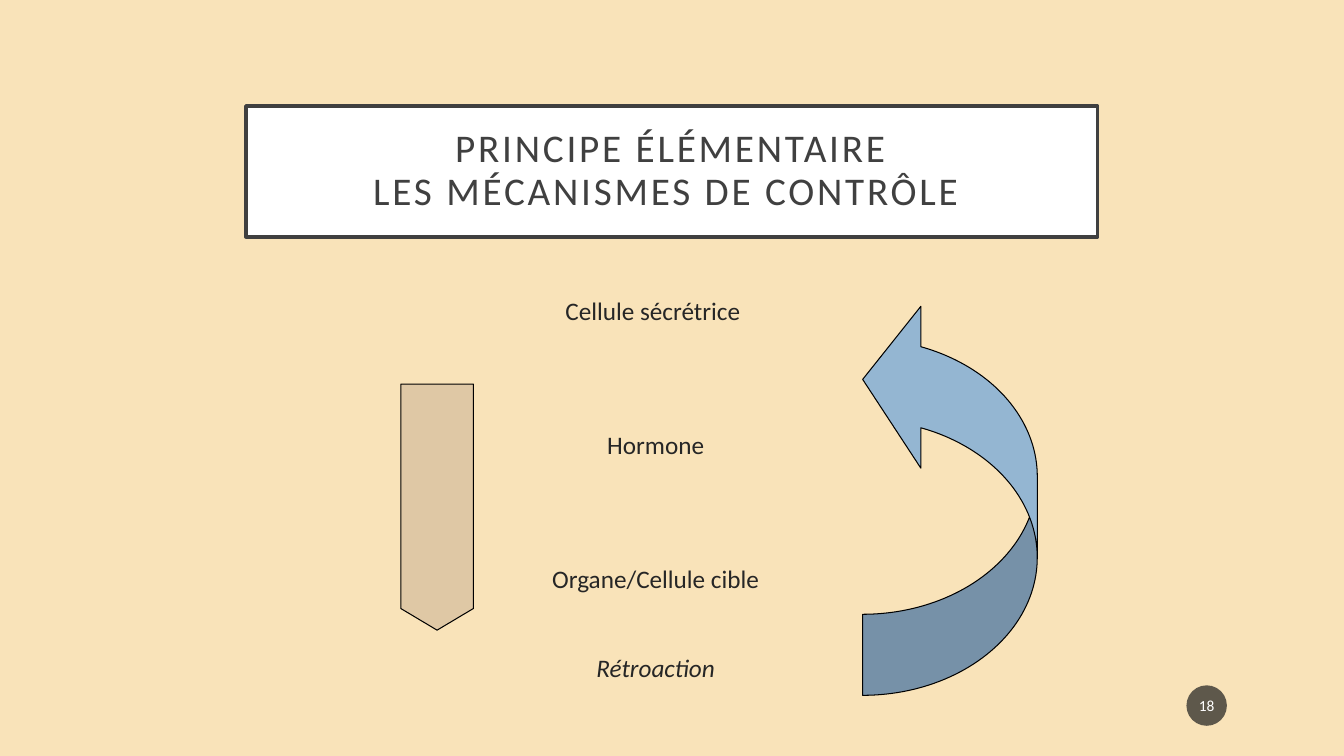
from lxml import etree
from pptx import Presentation
from pptx.dml.color import RGBColor
from pptx.enum.shapes import MSO_SHAPE
from pptx.enum.text import MSO_ANCHOR, PP_ALIGN
from pptx.oxml.ns import qn
from pptx.util import Cm, Pt

RECTANGLE, OVAL = MSO_SHAPE.RECTANGLE, MSO_SHAPE.OVAL
PENTAGON, CURVED_ARROW = MSO_SHAPE.PENTAGON, MSO_SHAPE.CURVED_RIGHT_ARROW
CENTER, MIDDLE, TOP = PP_ALIGN.CENTER, MSO_ANCHOR.MIDDLE, MSO_ANCHOR.TOP

FONT = "Calibri"
COLORS = {
    "background": "F9E3B9", "title_fill": "FFFFFF", "title": "404040",
    "body": "262626", "badge": "1D1D1D", "badge_text": "FFFFFF",
    "descent": "775F55", "feedback": "94B6D2", "outline": "000000",
}
ROW, LINE = 32, 22  # step of the label grid and height of a text line, in points


def color(name):
    return RGBColor.from_string(COLORS[name])


def add_figure(slide, kind, box, fill, opacity=100, line=None, width=0.75,
               rotation=0, adjustments=()):
    figure = slide.shapes.add_shape(kind, *(Cm(length) for length in box))
    figure.shadow.inherit = False
    figure.rotation = rotation
    for index, value in enumerate(adjustments):
        figure.adjustments[index] = value
    figure.fill.solid()
    figure.fill.fore_color.rgb = color(fill)
    if opacity < 100:
        tint = figure.fill._xPr.find(f"{qn('a:solidFill')}/{qn('a:srgbClr')}")
        etree.SubElement(tint, qn("a:alpha"), val=str(opacity * 1000))
    if line:
        figure.line.color.rgb = color(line)
        figure.line.width = Pt(width)
    else:
        figure.line.fill.background()
    return figure


def write(paragraph, text, size=18, ink="body", italic=False, tracking=0,
          before=0, spacing=1.0):
    paragraph.text = text
    paragraph.alignment = CENTER
    paragraph.space_before = Pt(before)
    paragraph.line_spacing = spacing
    for run in paragraph.runs:
        run.font.name = FONT
        run.font.size = Pt(size)
        run.font.italic = italic
        run.font.color.rgb = color(ink)
        if tracking:
            run.font._element.set("spc", str(tracking * 100))


def set_frame(frame, anchor, side, top):
    frame.word_wrap = True
    frame.vertical_anchor = anchor
    frame.margin_left = frame.margin_right = Cm(side)
    frame.margin_top = frame.margin_bottom = Cm(top)


def add_title(slide, box):
    title = add_figure(slide, RECTANGLE, box, "title_fill", line="title", width=2.5)
    set_frame(title.text_frame, MIDDLE, 0.5, 0.5)
    write(title.text_frame.paragraphs[0],
          "PRINCIPE ÉLÉMENTAIRE\vLES MÉCANISMES DE CONTRÔLE ",
          size=28, ink="title", tracking=2, spacing=0.9)


def add_labels(slide, box):
    labels = slide.shapes.add_textbox(*(Cm(length) for length in box)).text_frame
    set_frame(labels, TOP, 0.25, 0)
    steps = [("Cellule sécrétrice ", 0), ("Hormone", 3),
             ("Organe/Cellule cible", 3), ("Rétroaction", 2)]
    for index, (step, rows) in enumerate(steps):
        paragraph = labels.add_paragraph() if index else labels.paragraphs[0]
        write(paragraph, step, italic=step == "Rétroaction",
              before=ROW * rows - LINE if rows else 0)


def add_descent_arrow(slide, box):
    # The box is upright; the shape lies on its side before it is turned
    left, top, width, height = box
    shift = (height - width) / 2
    add_figure(slide, PENTAGON, (left - shift, top + shift, height, width), "descent",
               opacity=20, line="outline", rotation=90, adjustments=[0.298])


def add_feedback_arrow(slide, box):
    add_figure(slide, CURVED_ARROW, box, "feedback", line="outline", rotation=180,
               adjustments=[0.464, 0.927, 0.333])


def add_page_number(slide, box):
    badge = add_figure(slide, OVAL, box, "badge", opacity=70)
    set_frame(badge.text_frame, MIDDLE, 0.05, 0.13)
    write(badge.text_frame.paragraphs[0], "18", size=11, ink="badge_text")


def main():
    deck = Presentation()
    deck.slide_width, deck.slide_height = Cm(33.87), Cm(19.05)
    slide = deck.slides.add_slide(deck.slide_layouts[6])
    slide.background.fill.solid()
    slide.background.fill.fore_color.rgb = color("background")

    # Title and steps
    add_title(slide, (6.2, 2.67, 21.46, 3.3))
    add_labels(slide, (6.05, 7.45, 20.95, 10.4))
    # Page number
    add_page_number(slide, (29.9, 17.27, 1.02, 1.02))
    # Action downwards and feedback upwards
    add_descent_arrow(slide, (10.1, 9.68, 1.83, 6.2))
    add_feedback_arrow(slide, (21.74, 7.52, 4.4, 10.0))
    deck.save("out.pptx")


if __name__ == "__main__":
    main()
